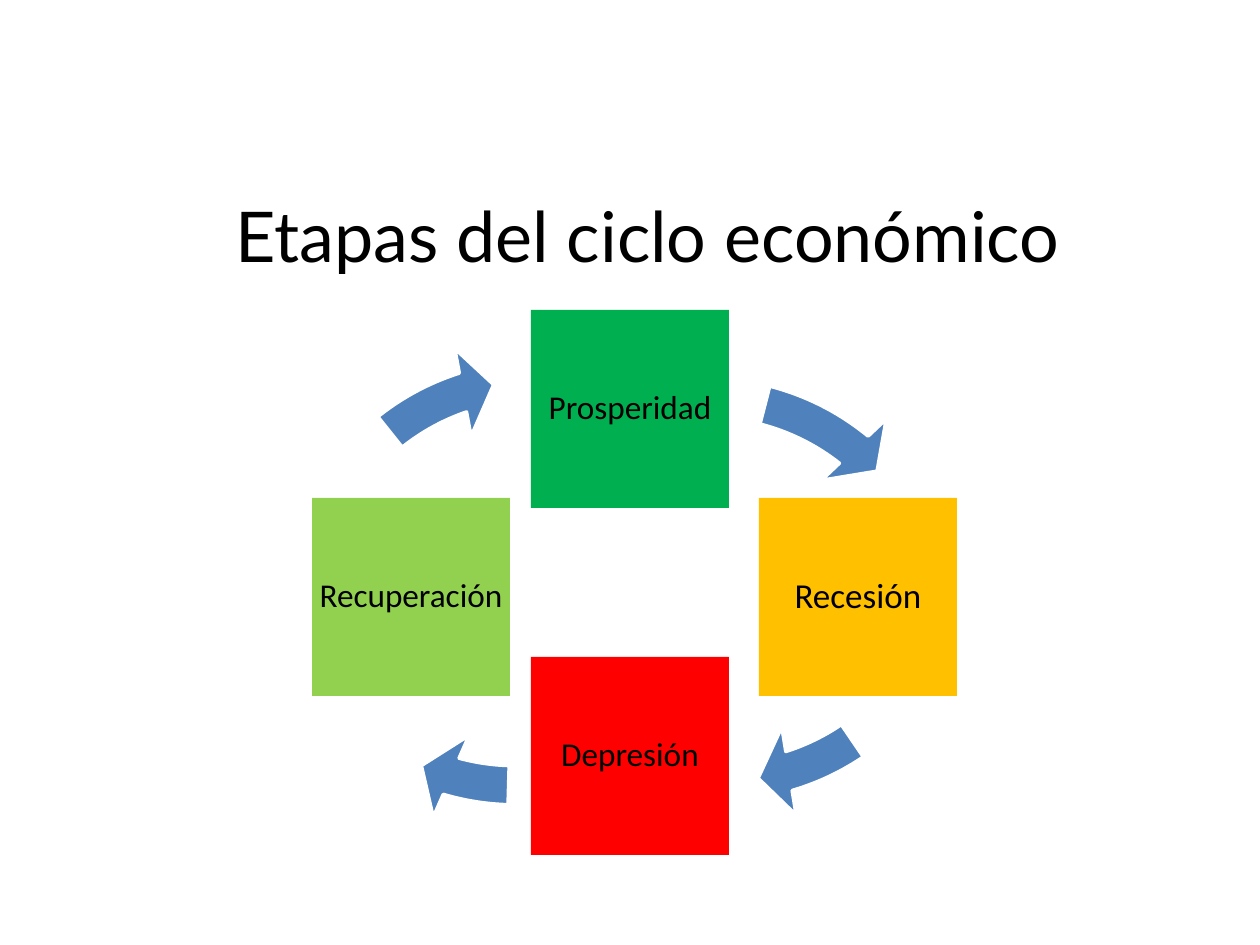
from pptx import Presentation, util as u
from pptx.dml.color import RGBColor
from pptx.enum import shapes, text

EMU_PER_PX = 914400 / 126
SQUARE, RING = 198, 559
STAGES = [
    ("Prosperidad", 19, "00B050", (295, 43)),
    ("Recesión", 20, "FFC000", (523, 231)),
    ("Depresión", 19, "FF0000", (295, 390)),
    ("Recuperación", 19, "92D050", (76, 231)),
]
ARROWS = [
    ((191, 86), 185.31, 170.64),
    ((205, 0), 43.82, 33.5),
    ((0, 4), 63.53, 55),
    ((21, 69), 151.04, 138.84),
]


def px(n):
    return u.Emu(round(n * EMU_PER_PX))


def color(value):
    return RGBColor.from_string(value)


def add_text(sp, content, size, font="Calibri", fill="000000", spacing=1.0, inset=None, wrap=True):
    tf = sp.text_frame
    tf.word_wrap = wrap
    if inset is not None:
        tf.margin_left = tf.margin_right = tf.margin_top = tf.margin_bottom = px(inset)
    p = tf.paragraphs[0]
    p.alignment = text.PP_ALIGN.CENTER
    p.line_spacing = spacing
    r = p.add_run()
    r.text = content
    r.font.size = u.Pt(size)
    r.font.name = font
    r.font.color.rgb = color(fill)
    return tf


def add_shape(s, kind, x, y, size, fill):
    sp = s.shapes.add_shape(kind, px(x), px(y), px(size), px(size))
    sp.shadow.inherit = False
    sp.fill.solid()
    sp.fill.fore_color.rgb = color(fill)
    sp.line.fill.background()
    return sp


def add_title(s, left, top, width, height):
    sp = s.shapes.add_textbox(px(left), px(top), px(width), px(height))
    tf = add_text(sp, "Etapas del ciclo económico", 40, font="Lato", wrap=False)
    tf.auto_size = text.MSO_AUTO_SIZE.SHAPE_TO_FIT_TEXT


def add_cycle(s, left, top):
    kinds = shapes.MSO_SHAPE
    for (name, size, fill, (x, y)), ((ax, ay), head, tail) in zip(STAGES, ARROWS):
        sp = add_shape(s, kinds.RECTANGLE, left + x, top + y, SQUARE, fill)
        tf = add_text(sp, name, size, spacing=0.9, inset=4)
        tf.vertical_anchor = text.MSO_ANCHOR.MIDDLE
        arrow = add_shape(s, kinds.CIRCULAR_ARROW, left + ax, top + ay, RING, "4F81BD")
        arrow.line.color.rgb = color("FFFFFF")
        arrow.line.width = u.Pt(2)
        for i, value in enumerate((0.07, 4.65, head, tail, 0.08)):
            arrow.adjustments[i] = value


def main():
    prs = Presentation()
    prs.slide_width, prs.slide_height = px(1260), px(945)
    s = prs.slides.add_slide(prs.slide_layouts[6])
    add_cycle(s, 236, 267)
    add_title(s, 217, 186, 861, 97)
    prs.save("out.pptx")


if __name__ == "__main__":
    main()
